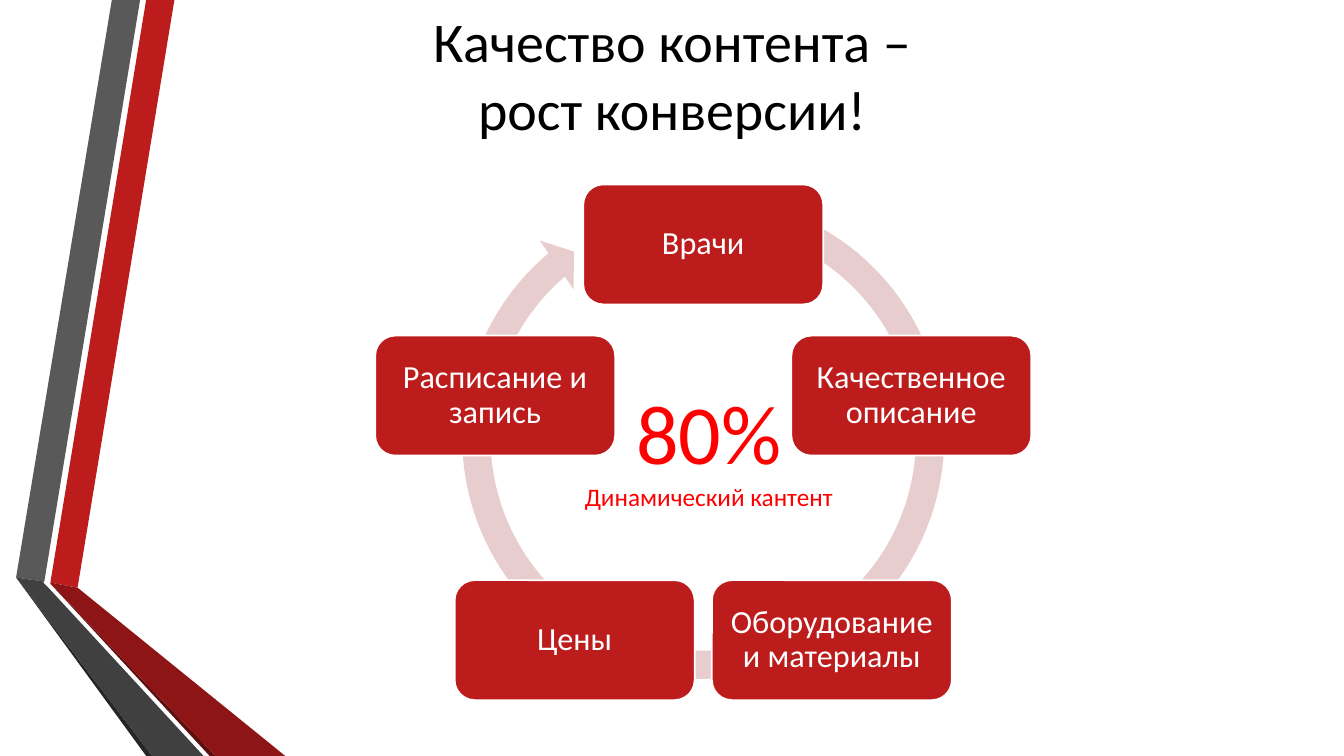
from math import cos, radians, sin

from pptx import Presentation
from pptx.dml.color import RGBColor
from pptx.enum.shapes import MSO_SHAPE as Shape
from pptx.enum.text import MSO_ANCHOR as Anchor, PP_ALIGN as Align
from pptx.util import Pt

PX = 9144  # EMU per px, 100 px to the inch
FONT = "Calibri"
RED, PALE_RED, WHITE = "BC1C1C", "E7CDCD", "FFFFFF"

RIBBONS = [
    (RED, [(50, 578), (77, 583), (173, 0), (145, 0)]),
    ("595959", [(139, 0), (111, 0), (16, 573), (44, 577)]),
    ("262626", [(16, 573), (145, 750), (151, 750)]),
    ("5E0E0E", [(50, 579), (208, 750), (214, 750)]),
    ("8D1515", [(50, 579), (214, 750), (283, 750), (77, 583), (50, 578)]),
    ("404040", [(202, 750), (48, 583), (43, 578), (44, 577), (16, 573), (151, 750)]),
]
STEPS = ["Врачи", "Качественное описание", "Оборудование и материалы",
         "Цены", "Расписание и запись"]


def color(value):
    return RGBColor.from_string(value)


def emu(*lengths):
    return [round(length * PX) for length in lengths]


def paint(shape, fill):
    shape.shadow.inherit = False
    shape.fill.solid()
    shape.fill.fore_color.rgb = color(fill)
    shape.line.fill.background()


def style(paragraph, size, text_color):
    paragraph.alignment = Align.CENTER
    for run in paragraph.runs:
        run.font.name = FONT
        run.font.size = Pt(size)
        run.font.color.rgb = color(text_color)


def add_ribbons(slide, left, top):
    for fill, points in RIBBONS:
        corners = [(left + x, top + y) for x, y in points]
        builder = slide.shapes.build_freeform(*corners[0], scale=PX)
        builder.add_line_segments(corners[1:], close=True)
        paint(builder.convert_to_shape(), fill)


def add_title(slide, left, top, width, height):
    frame = slide.shapes.add_textbox(*emu(left, top, width, height)).text_frame
    frame.word_wrap = True
    frame.vertical_anchor = Anchor.MIDDLE
    frame.text = "Качество контента –\vрост конверсии!"
    style(frame.paragraphs[0], 40, "000000")


def add_step(slide, text, left, top, width, height):
    step = slide.shapes.add_shape(Shape.ROUNDED_RECTANGLE, *emu(left, top, width, height))
    paint(step, RED)
    step.line.color.rgb = color(WHITE)
    step.line.width = Pt(1.25)
    frame = step.text_frame
    frame.word_wrap = True
    frame.vertical_anchor = Anchor.MIDDLE
    frame.margin_left = frame.margin_right = frame.margin_top = frame.margin_bottom = 9 * PX
    frame.text = text
    paragraph = frame.paragraphs[0]
    paragraph.line_spacing = 0.9
    style(paragraph, 23, WHITE)


def add_cycle(slide, left, top, width):
    """Place the steps evenly on a circle, clockwise from the top, over a ring arrow."""
    step_width, step_height, radius, ring_size = 238, 119, 217, 509
    center_x = left + width / 2
    center_y = top + step_height / 2 + radius

    ring = slide.shapes.add_shape(
        Shape.CIRCULAR_ARROW, *emu(center_x - ring_size / 2, top - 3, ring_size, ring_size))
    for index, value in enumerate([0.055, 3.307, 137.843, 173.809, 0.058]):
        ring.adjustments[index] = value
    paint(ring, PALE_RED)

    for index, text in enumerate(STEPS):
        angle = radians(360 / len(STEPS) * index)
        add_step(slide, text,
                 center_x + radius * sin(angle) - step_width / 2,
                 center_y - radius * cos(angle) - step_height / 2,
                 step_width, step_height)


def add_result(slide, left, top, width, height):
    frame = slide.shapes.add_textbox(*emu(left, top, width, height)).text_frame
    frame.word_wrap = False
    frame.text = "80%\nДинамический кантент"
    for paragraph, size in zip(frame.paragraphs, (60, 18)):
        style(paragraph, size, "FF0000")


def main():
    presentation = Presentation()
    presentation.slide_width, presentation.slide_height = emu(1333, 750)
    slide = presentation.slides.add_slide(presentation.slide_layouts[6])
    add_ribbons(slide, 0, 0)
    add_cycle(slide, 372, 183, 651)
    add_title(slide, 300, 0, 733, 147)
    add_result(slide, 565, 373, 276, 141)
    presentation.save("out.pptx")


if __name__ == "__main__":
    main()
